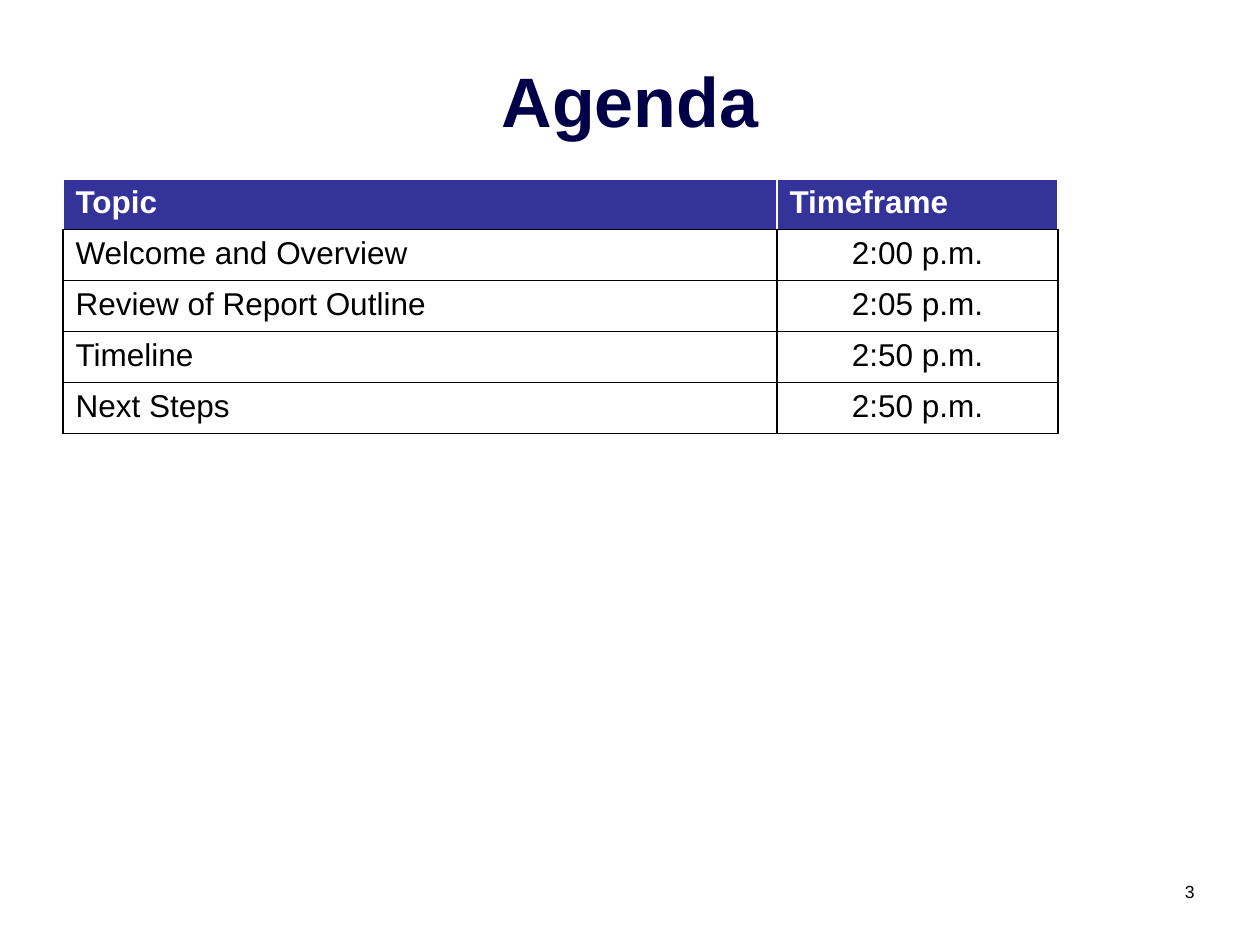
from pptx import Presentation
from pptx.dml.color import RGBColor as RGB
from pptx.enum.text import MSO_ANCHOR as ANCHOR, PP_ALIGN as ALIGN
from pptx.oxml.ns import qn
from pptx.util import Emu, Pt
from lxml.etree import SubElement

SCALE = 914400 / 126
COLORS = {
    "title": "000048",
    "header": "333399",
    "white": "FFFFFF",
    "black": "000000",
}
AGENDA = [
    ("Topic", "Timeframe"),
    ("Welcome and Overview", "2:00 p.m."),
    ("Review of Report Outline", "2:05 p.m."),
    ("Timeline", "2:50 p.m."),
    ("Next Steps", "2:50 p.m."),
]


def px(n):
    return Emu(round(n * SCALE))


class Deck:
    font = "Arial"

    def __init__(self, width, height):
        self.prs = Presentation()
        self.prs.slide_width, self.prs.slide_height = px(width), px(height)
        self.s = self.prs.slides.add_slide(self.prs.slide_layouts[6])

    def add_run(self, tf, text, size, color, bold=False, align=ALIGN.LEFT):
        p = tf.paragraphs[0]
        p.alignment = align
        r = p.add_run()
        r.text = text
        r.font.name, r.font.size, r.font.bold = self.font, Pt(size), bold
        r.font.color.rgb = RGB.from_string(COLORS[color])

    def text(self, box, text, size, color, anchor, **style):
        tf = self.s.shapes.add_textbox(*map(px, box)).text_frame
        tf.word_wrap = True
        tf.vertical_anchor = anchor
        self.add_run(tf, text, size, color, **style)

    def borders(self, cell, colors):
        """Draw 1 pt borders, colours given as left, right, top, bottom."""
        tcPr = cell._tc.get_or_add_tcPr()
        for side, color in zip("LRTB", colors):
            ln = SubElement(tcPr, qn(f"a:ln{side}"), w=str(Pt(1)))
            fill = SubElement(ln, qn("a:solidFill"))
            SubElement(fill, qn("a:srgbClr"), val=COLORS[color])

    def table(self, left, top, widths, heights, rows):
        """Add a table whose first row is a filled header."""
        box = map(px, (left, top, sum(widths), sum(heights)))
        table = self.s.shapes.add_table(len(rows), len(widths), *box).table
        table.horz_banding = False
        for col, width in zip(table.columns, widths):
            col.width = px(width)
        for row, height in zip(table.rows, heights):
            row.height = px(height)
        for i, row in enumerate(rows):
            header = i == 0
            edge = "white" if header else "black"
            for j, text in enumerate(row):
                cell = table.cell(i, j)
                self.borders(cell, (edge, edge, edge, "black"))
                if header:
                    cell.fill.solid()
                    cell.fill.fore_color.rgb = RGB.from_string(COLORS["header"])
                else:
                    cell.fill.background()
                align = ALIGN.CENTER if j and not header else ALIGN.LEFT
                self.add_run(cell.text_frame, text, 18, edge, header, align)


def main():
    deck = Deck(1260, 945)
    deck.text((987, 858, 220, 50), "3", 10, "black", ANCHOR.BOTTOM,
              align=ALIGN.RIGHT)
    deck.text((63, 21, 1134, 158), "Agenda", 40, "title", ANCHOR.MIDDLE,
              bold=True, align=ALIGN.CENTER)
    deck.table(63, 179, (714, 281), (47,) + (51,) * 4, AGENDA)
    deck.prs.save("out.pptx")


if __name__ == "__main__":
    main()
